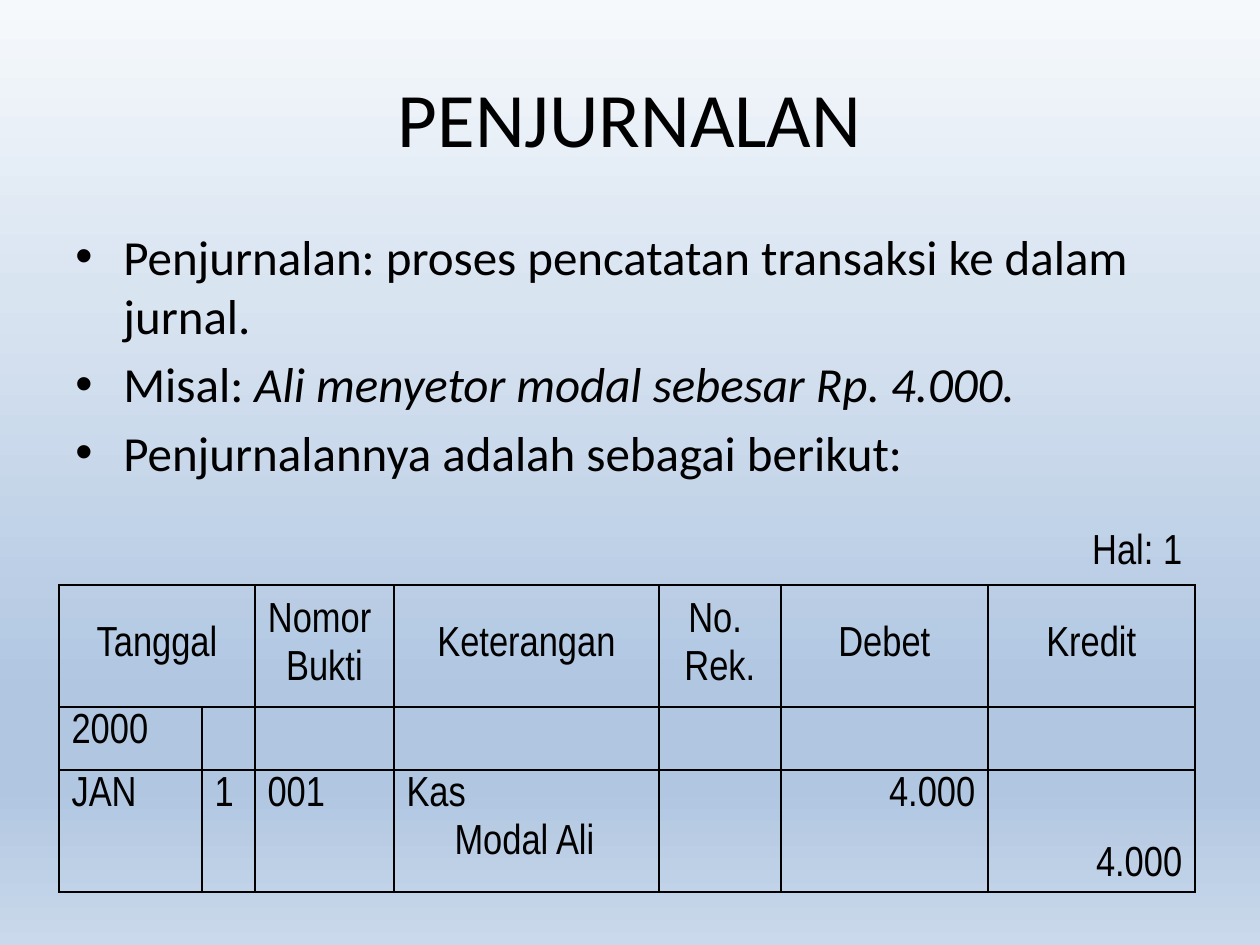
from dataclasses import dataclass
from lxml import etree
from pptx import Presentation
from pptx.dml.color import RGBColor
from pptx.enum.text import MSO_ANCHOR, PP_ALIGN
from pptx.oxml.ns import qn
from pptx.util import Pt

LEFT, CENTER, RIGHT = PP_ALIGN.LEFT, PP_ALIGN.CENTER, PP_ALIGN.RIGHT
TOP, MIDDLE, BOTTOM = MSO_ANCHOR.TOP, MSO_ANCHOR.MIDDLE, MSO_ANCHOR.BOTTOM
PX = 914400 // 126


@dataclass(frozen=True)
class Theme:
    """Colours, fonts and type sizes of the slide."""
    ink: str = "000000"
    sky: tuple = ((0, "F6F9FC"), (31, "D9E4F1"), (74, "B0C6E1"),
                  (83, "B0C6E1"), (100, "CAD9EB"))
    text_font: str = "Calibri"
    table_font: str = "Arial Narrow"
    title: int = 44
    body: int = 28
    cell: int = 24


theme = Theme()


def add_span(para, text, font, size, italic=False):
    """Add one run of text in the given font."""
    span = para.add_run()
    span.text = text
    span.font.name = font
    span.font.size = Pt(size)
    span.font.italic = italic
    span.font.color.rgb = RGBColor.from_string(theme.ink)


def set_borders(cell, visible):
    """Draw the sides named in visible and clear the others."""
    props = cell._tc.get_or_add_tcPr()
    for side in "LRTB":
        line = etree.SubElement(props, qn(f"a:ln{side}"), w=str(Pt(1)))
        if side in visible:
            fill = etree.SubElement(line, qn("a:solidFill"))
            etree.SubElement(fill, qn("a:srgbClr"), val=theme.ink)
        else:
            etree.SubElement(line, qn("a:noFill"))


deck = Presentation()
deck.slide_width, deck.slide_height = 1260 * PX, 945 * PX
page = deck.slides.add_slide(deck.slide_layouts[6])

# Background
sky = page.background.fill
sky.gradient()
sky.gradient_angle = 270
stops = next(page._element.iter(qn("a:gsLst")))
for stop in list(stops):
    stops.remove(stop)
for percent, colour in theme.sky:
    stop = etree.SubElement(stops, qn("a:gs"), pos=str(percent * 1000))
    etree.SubElement(stop, qn("a:srgbClr"), val=colour)

# Title
title = page.shapes.add_textbox(63 * PX, 38 * PX, 1134 * PX, 157 * PX).text_frame
title.word_wrap = True
title.vertical_anchor = MIDDLE
title.paragraphs[0].alignment = CENTER
add_span(title.paragraphs[0], "PENJURNALAN", theme.text_font, theme.title)

# Bullets
bullets = [
    [("Penjurnalan: proses pencatatan transaksi ke dalam jurnal.", False)],
    [("Misal: ", False), ("Ali menyetor modal sebesar Rp. 4.000.", True)],
    [("Penjurnalannya adalah sebagai berikut:", False)],
]
body = page.shapes.add_textbox(63 * PX, 220 * PX, 1143 * PX, 282 * PX).text_frame
body.word_wrap = True
for index, spans in enumerate(bullets):
    para = body.add_paragraph() if index else body.paragraphs[0]
    para.space_before = Pt(theme.body * 0.2)
    props = para._p.get_or_add_pPr()
    props.set("marL", str(48 * PX))
    props.set("indent", str(-48 * PX))
    etree.SubElement(props, qn("a:buFont"), typeface="Arial")
    etree.SubElement(props, qn("a:buChar"), char="•")
    for text, italic in spans:
        add_span(para, text, theme.text_font, theme.body, italic)

# Journal table
columns = [143, 53, 139, 265, 122, 207, 207]
rows = [52, 100, 52, 100]
entries = {
    (0, 6): (["Hal: 1"], RIGHT, MIDDLE),
    (1, 0): (["Tanggal"], CENTER, MIDDLE),
    (1, 2): (["Nomor ", "Bukti"], CENTER, MIDDLE),
    (1, 3): (["Keterangan"], CENTER, MIDDLE),
    (1, 4): (["No. ", "Rek."], CENTER, MIDDLE),
    (1, 5): (["Debet"], CENTER, MIDDLE),
    (1, 6): (["Kredit"], CENTER, MIDDLE),
    (2, 0): (["2000"], LEFT, TOP),
    (3, 0): (["JAN"], LEFT, TOP),
    (3, 1): (["1"], LEFT, TOP),
    (3, 2): (["001"], LEFT, TOP),
    (3, 3): (["Kas", "Modal Ali"], LEFT, TOP),
    (3, 5): (["4.000"], RIGHT, TOP),
    (3, 6): (["4.000"], RIGHT, BOTTOM),
}
journal = page.shapes.add_table(len(rows), len(columns), 59 * PX, 522 * PX,
                                sum(columns) * PX, sum(rows) * PX).table
journal.first_row = journal.horz_banding = False
for column, width in zip(journal.columns, columns):
    column.width = width * PX
for row, height in zip(journal.rows, rows):
    row.height = height * PX
for r in range(len(rows)):
    for c in range(len(columns)):
        cell = journal.cell(r, c)
        set_borders(cell, "LRTB" if r else "B")
        cell.fill.background()
        lines, alignment, anchor = entries.get((r, c), ([], LEFT, TOP))
        cell.vertical_anchor = anchor
        for index, text in enumerate(lines):
            frame = cell.text_frame
            para = frame.add_paragraph() if index else frame.paragraphs[0]
            para.alignment = alignment
            para.space_before = Pt(theme.cell * 0.2)
            add_span(para, text, theme.table_font, theme.cell)
for r in (0, 1):
    journal.cell(r, 0).merge(journal.cell(r, 1))
credit_entry = journal.cell(3, 3).text_frame.paragraphs[1]
credit_entry._p.get_or_add_pPr().set("marL", str(48 * PX))

deck.save("out.pptx")
